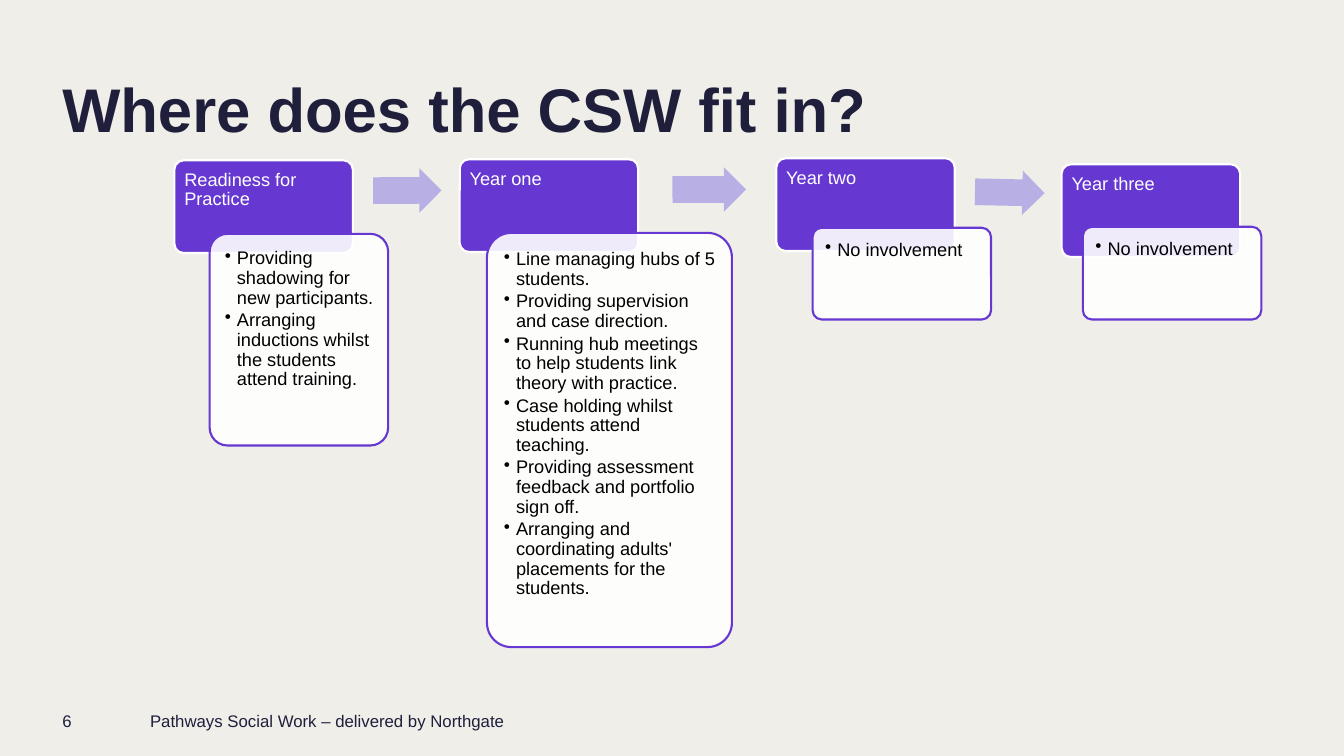
from lxml import etree
from pptx import Presentation
from pptx import util as u
from pptx.dml.color import RGBColor
from pptx.enum import shapes, text
from pptx.oxml.ns import qn

Inches = u.Inches
COLORS = {
    "background": "F0EEE9",
    "navy": "1F1F3C",
    "purple": "6638D1",
    "lilac": "B8AFE5",
    "white": "FFFFFF",
    "black": "000000",
}
HEADER_WIDTH, HEADER_HEIGHT = 1.77, 0.92
CORNER = 0.1
CORNER_INSET = CORNER * 0.29  # text clears the rounded corner

# header: left, top; card: left, top, width, height
STAGES = [
    ("Readiness for Practice", (1.73, 1.59), (2.08, 2.32, 1.77, 2.1), [
        "Providing shadowing for new participants.",
        "Arranging inductions whilst the students attend training.",
    ]),
    ("Year one", (4.56, 1.58), (4.83, 2.31, 2.43, 4.11), [
        "Line managing hubs of 5 students.",
        "Providing supervision and case direction.",
        "Running hub meetings to help students link theory with practice.",
        "Case holding whilst students attend teaching.",
        "Providing assessment feedback and portfolio sign off.",
        "Arranging and coordinating adults' placements for the students.",
    ]),
    ("Year two", (7.7, 1.57), (8.06, 2.26, 1.77, 0.91), ["No involvement"]),
    ("Year three", (10.53, 1.63), (10.74, 2.25, 1.77, 0.92), ["No involvement"]),
]
# left, top, width, rotation
ARROWS = [(3.7, 1.67, 0.68, 359.8), (6.67, 1.66, 0.73, 359.9), (9.67, 1.69, 0.69, 1.2)]

deck = Presentation()
deck.slide_width, deck.slide_height = Inches(13.33), Inches(7.5)
page = deck.slides.add_slide(deck.slide_layouts[6])
page.background.fill.solid()
page.background.fill.fore_color.rgb = RGBColor.from_string(COLORS["background"])


def add_text(lines, left, top, width, height, size=13, color="navy", bold=False,
             anchor=text.MSO_ANCHOR.TOP, insets=(0.1, 0.05, 0.1, 0.05),
             line_spacing=None, space_after=None, bullets=False):
    """Add a text box with one paragraph per line; insets run left, top, right, bottom."""
    box = page.shapes.add_textbox(Inches(left), Inches(top), Inches(width), Inches(height))
    frame = box.text_frame
    frame.word_wrap = True
    frame.vertical_anchor = anchor
    (frame.margin_left, frame.margin_top,
     frame.margin_right, frame.margin_bottom) = map(Inches, insets)
    for index, line in enumerate(lines):
        para = frame.add_paragraph() if index else frame.paragraphs[0]
        if bullets:
            para.level = 1
            props = para._p.get_or_add_pPr()
            props.set("marL", str(Inches(0.12)))
            props.set("indent", str(-Inches(0.12)))
            etree.SubElement(props, qn("a:buChar"), char="•")
        para.line_spacing = line_spacing
        if space_after:
            para.space_after = u.Pt(space_after)
        span = para.add_run()
        span.text = line
        span.font.name, span.font.size, span.font.bold = "Arial", u.Pt(size), bold
        span.font.color.rgb = RGBColor.from_string(COLORS[color])


def add_block(preset, left, top, width, height, fill, line=None, opacity=100,
              adjustments=(CORNER,)):
    block = page.shapes.add_shape(preset, Inches(left), Inches(top), Inches(width), Inches(height))
    block.shadow.inherit = False
    for index, value in enumerate(adjustments):
        block.adjustments[index] = value
    block.fill.solid()
    block.fill.fore_color.rgb = RGBColor.from_string(COLORS[fill])
    if opacity < 100:
        fill_color = block.element.spPr.find(f"{qn('a:solidFill')}/{qn('a:srgbClr')}")
        etree.SubElement(fill_color, qn("a:alpha"), val=str(opacity * 1000))
    if line:
        block.line.color.rgb = RGBColor.from_string(COLORS[line])
        block.line.width = u.Pt(1.5)
    else:
        block.line.fill.background()
    return block


middle = text.MSO_ANCHOR.MIDDLE
add_text(["Where does the CSW fit in?"], 0.52, 0.39, 11.5, 1.45, size=44, bold=True,
         anchor=middle, line_spacing=0.9)
add_text(["Pathways Social Work – delivered by Northgate"], 1.39, 6.95, 4.5, 0.4,
         size=12, anchor=middle)
add_text(["6"], 0.52, 6.95, 0.71, 0.4, size=12, anchor=middle)

rounded = shapes.MSO_SHAPE.ROUNDED_RECTANGLE
for name, (left, top), card, duties in STAGES:
    add_block(rounded, left, top, HEADER_WIDTH, HEADER_HEIGHT, "purple", line="white")
    add_text([name], left, top, HEADER_WIDTH, 0.61, color="white",
             insets=(0.1, 0.1, 0.1, 0.05), line_spacing=0.9, space_after=4.5)

    add_block(rounded, *card, "white", line="purple", opacity=90)
    left, top, width, height = card
    inset = CORNER_INSET * min(width, height)
    add_text(duties, left + inset, top + inset, width - 2 * inset, height - 2 * inset,
             color="black", insets=(0.1,) * 4, line_spacing=0.9, space_after=2, bullets=True)

for left, top, width, rotation in ARROWS:
    arrow = add_block(shapes.MSO_SHAPE.RIGHT_ARROW, left, top, width, 0.44, "lilac",
                      adjustments=(0.6, 0.5))
    arrow.rotation = rotation

deck.save("out.pptx")
